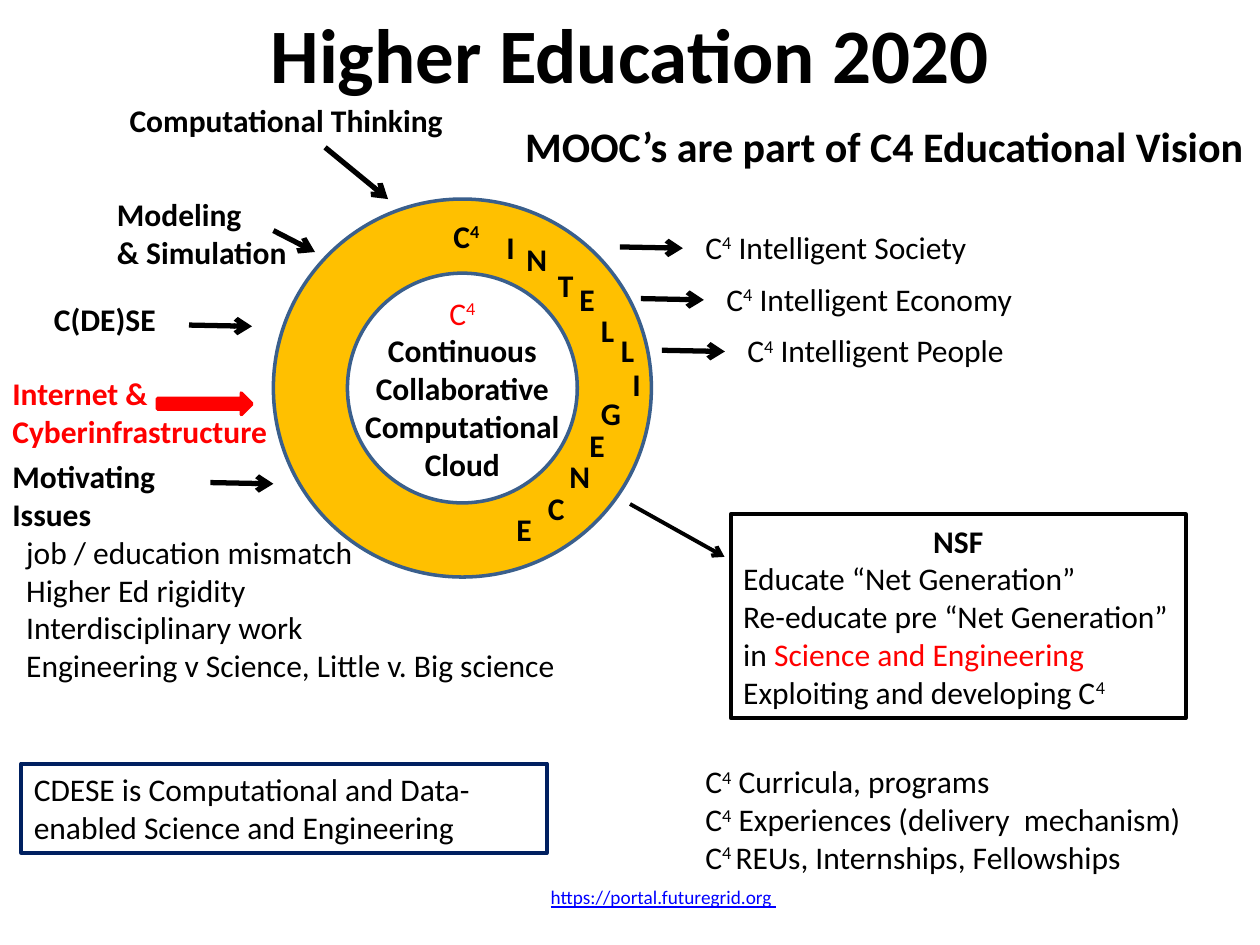
from dataclasses import dataclass

from lxml import etree
from pptx import Presentation
from pptx.dml.color import RGBColor
from pptx.enum.shapes import MSO_CONNECTOR, MSO_SHAPE
from pptx.enum.text import MSO_ANCHOR, MSO_AUTO_SIZE, PP_ALIGN
from pptx.oxml.ns import qn
from pptx.util import Inches, Pt


@dataclass(frozen=True)
class Theme:
    """Colours, font and type sizes of the slide."""
    font: str = "Calibri"
    ink: str = "000000"
    accent: str = "FF0000"
    ring: str = "FFC000"
    ring_line: str = "3A5F8C"
    navy: str = "002060"
    link: str = "0000FF"
    title: float = 44
    headline: float = 24
    body: float = 18
    footer: float = 11


@dataclass(frozen=True)
class Box:
    """A rectangle in inches."""
    left: float
    top: float
    width: float
    height: float

    def inside(self, left, top, width, height):
        """Return a box placed relative to this one."""
        return Box(self.left + left, self.top + top, width, height)

    def lengths(self):
        """Return the four measures as lengths."""
        return [Inches(value) for value in (self.left, self.top, self.width, self.height)]


THEME = Theme()
LETTERS = [
    ("I", 1.75, 0.18), ("N", 1.91, 0.28), ("T", 2.16, 0.48), ("E", 2.33, 0.59),
    ("L", 2.5, 0.84), ("L", 2.66, 1), ("I", 2.75, 1.27), ("G", 2.5, 1.5),
    ("E", 2.41, 1.75), ("N", 2.25, 2), ("C", 2.08, 2.25), ("E", 1.83, 2.42),
]


def add_spans(para, text, size=THEME.body, color=THEME.ink, bold=False):
    """Add text run by run, raising the parts between carets."""
    for index, part in enumerate(text.split("^")):
        if not part:
            continue
        span = para.add_run()
        span.text = part
        font = span.font
        font.name, font.size, font.bold = THEME.font, Pt(size), bold
        font.color.rgb = RGBColor.from_string(color)
        if index % 2:
            span._r.get_or_add_rPr().set("baseline", "30000")


def add_lines(frame, lines, align=PP_ALIGN.LEFT, **style):
    """Fill a text frame with one paragraph for each line."""
    paras = []
    for index, line in enumerate(lines):
        para = frame.add_paragraph() if index else frame.paragraphs[0]
        para.alignment = align
        add_spans(para, line, **style)
        paras.append(para)
    return paras


def add_label(shapes, box, lines, wrap=False, **style):
    """Add a text box that grows with its lines."""
    frame = shapes.add_textbox(*box.lengths()).text_frame
    frame.word_wrap = wrap
    frame.auto_size = MSO_AUTO_SIZE.SHAPE_TO_FIT_TEXT
    return add_lines(frame, lines, **style)


def add_figure(shapes, kind, box, line, weight, fill=None):
    """Add a preset shape with a plain fill and outline."""
    shape = shapes.add_shape(kind, *box.lengths())
    shape.shadow.inherit = False
    if fill:
        shape.fill.solid()
        shape.fill.fore_color.rgb = RGBColor.from_string(fill)
    else:
        shape.fill.background()
    shape.line.color.rgb = RGBColor.from_string(line)
    shape.line.width = Pt(weight)
    return shape


def add_arrow(shapes, box, weight=3):
    """Draw an arrow from the top left to the bottom right of a box."""
    left, top, width, height = box.lengths()
    arrow = shapes.add_connector(
        MSO_CONNECTOR.STRAIGHT, left, top, left + width, top + height)
    arrow.line.color.rgb = RGBColor.from_string(THEME.ink)
    arrow.line.width = Pt(weight)
    etree.SubElement(arrow.line._get_or_add_ln(), qn("a:tailEnd"), type="arrow")
    etree.SubElement(arrow._element.spPr, qn("a:effectLst"))


def add_title(page, box):
    """Place the slide title."""
    title = page.shapes.title
    title.left, title.top, title.width, title.height = box.lengths()
    title.text_frame.vertical_anchor = MSO_ANCHOR.MIDDLE
    add_lines(title.text_frame, ["Higher Education 2020"],
              align=PP_ALIGN.CENTER, size=THEME.title, bold=True)


def add_ring(page, box):
    """Draw the ring with its centre text and curved word."""
    shapes = page.shapes.add_group_shape().shapes
    ring = add_figure(shapes, MSO_SHAPE.DONUT, box, THEME.ring_line, 2, THEME.ring)
    ring.adjustments[0] = 0.196
    frame = ring.text_frame
    frame.vertical_anchor = MSO_ANCHOR.MIDDLE
    add_lines(frame, ["C^4"], align=PP_ALIGN.CENTER, color=THEME.accent)
    for word in ("Continuous", "Collaborative", "Computational", "Cloud"):
        para = frame.add_paragraph()
        para.alignment = PP_ALIGN.CENTER
        add_spans(para, word, bold=True)
    add_label(shapes, box.inside(1.33, 0.09, 0.42, 0.4), ["C^4"], bold=True)
    for letter, left, top in LETTERS:
        add_label(shapes, box.inside(left, top, 0.33, 0.4), [letter], wrap=True, bold=True)


def add_inputs(page, box):
    """Place the drivers and their arrows to the left of the ring."""
    shapes = page.shapes
    paras = add_label(shapes, box.inside(0, 2.83, 4.57, 1.92),
                      ["Motivating", "Issues"], bold=True)
    frame = paras[0]._parent
    for issue in ("job / education mismatch", "Higher Ed rigidity", "Interdisciplinary work",
                  "Engineering v Science, Little v. Big science"):
        para = frame.add_paragraph()
        para._p.get_or_add_pPr().set("marL", str(Inches(0.11)))
        add_spans(para, issue)
    add_label(shapes, box.inside(0.93, 0, 2.71, 0.4), ["Computational Thinking"], bold=True)
    add_label(shapes, box.inside(0.83, 0.75, 1.56, 0.71),
              ["Modeling", "& Simulation"], bold=True)
    add_label(shapes, box.inside(0.33, 1.58, 1.01, 0.4), ["C(DE)SE"], bold=True)
    add_label(shapes, box.inside(0, 2.17, 2.24, 0.71),
              ["Internet &", "Cyberinfrastructure"], color=THEME.accent, bold=True)
    for place in ((2.58, 0.42, 0.5, 0.41), (2.17, 1.08, 0.33, 0.17),
                  (1.5, 1.83, 0.5, 0.01), (1.67, 3.08, 0.5, 0.01)):
        add_arrow(shapes, box.inside(*place))
    add_figure(shapes, MSO_SHAPE.RIGHT_ARROW, box.inside(1.25, 2.37, 0.75, 0.17),
               THEME.accent, 2, THEME.accent)


def add_outcomes(page, box):
    """Step the outcomes and their arrows down the right of the ring."""
    outcomes = (("Society", 2.31), ("Economy", 2.51), ("People", 2.27))
    for index, (name, width) in enumerate(outcomes):
        shapes = page.shapes.add_group_shape().shapes
        left, top = index / 6, index * 0.41
        add_arrow(shapes, box.inside(left, top + 0.2, 0.5, 0.01))
        add_label(shapes, box.inside(left + 0.58, top, width, 0.4), [f"C^4^ Intelligent {name}"])


def add_foundation(page, box):
    """Place the framed funding goals and the arrow leading to them."""
    add_arrow(page.shapes, box.inside(-0.8, -0.08, 0.75, 0.42), 2.25)
    frame = add_figure(page.shapes, MSO_SHAPE.RECTANGLE, box, THEME.ink, 2.25).text_frame
    frame.word_wrap = False
    paras = add_lines(frame, ["", "Educate “Net Generation”", "Re-educate pre “Net Generation”",
                              "in ", "Exploiting and developing C^4"])
    paras[0].alignment = PP_ALIGN.CENTER
    add_spans(paras[0], "NSF", bold=True)
    add_spans(paras[3], "Science and Engineering", color=THEME.accent)


def add_definition(page, box):
    """Place the framed definition."""
    shape = add_figure(page.shapes, MSO_SHAPE.RECTANGLE, box, THEME.navy, 2.25)
    shape.text_frame.word_wrap = True
    add_lines(shape.text_frame,
              ["CDESE is Computational and Data-enabled Science and Engineering"])


def add_footer(page, box):
    """Place the underlined web address."""
    frame = page.shapes.add_textbox(*box.lengths()).text_frame
    frame.word_wrap = True
    frame.vertical_anchor = MSO_ANCHOR.MIDDLE
    para, = add_lines(frame, ["https://portal.futuregrid.org "], align=PP_ALIGN.CENTER,
                      size=THEME.footer, color=THEME.link)
    para.runs[0].font.underline = True


def main():
    """Build and save the slide."""
    deck = Presentation()
    deck.slide_width, deck.slide_height = Inches(10), Inches(7.5)
    page = deck.slides.add_slide(deck.slide_layouts[5])
    add_footer(page, Box(3.44, 6.92, 3.65, 0.4))
    add_ring(page, Box(2.17, 1.58, 3, 3))
    add_inputs(page, Box(0, 0.75, 4.57, 4.75))
    add_outcomes(page, Box(4.92, 1.76, 3.26, 1.22))
    add_foundation(page, Box(5.8, 4.08, 3.61, 1.62))
    add_label(page.shapes, Box(5.5, 6, 4.03, 1.01),
              ["C^4^ Curricula, programs", "C^4^ Experiences (delivery  mechanism)",
               "C^4 ^REUs, Internships, Fellowships"])
    add_title(page, Box(0.5, 0, 9, 0.83))
    add_definition(page, Box(0.17, 6.06, 4.17, 0.71))
    add_label(page.shapes, Box(4.07, 0.91, 5.96, 0.5),
              ["MOOC’s are part of C4 Educational Vision"], size=THEME.headline, bold=True)
    deck.save("out.pptx")


if __name__ == "__main__":
    main()
